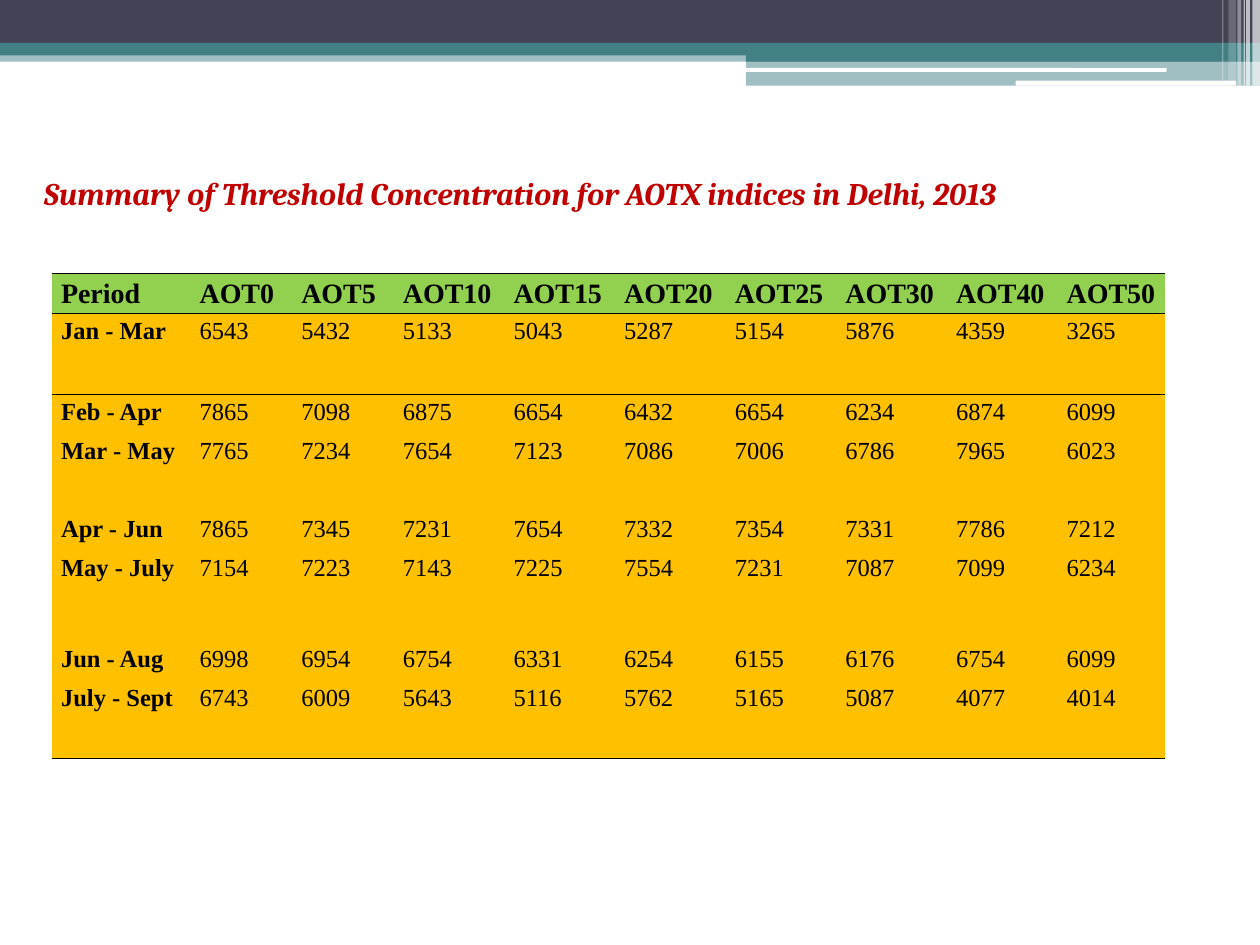
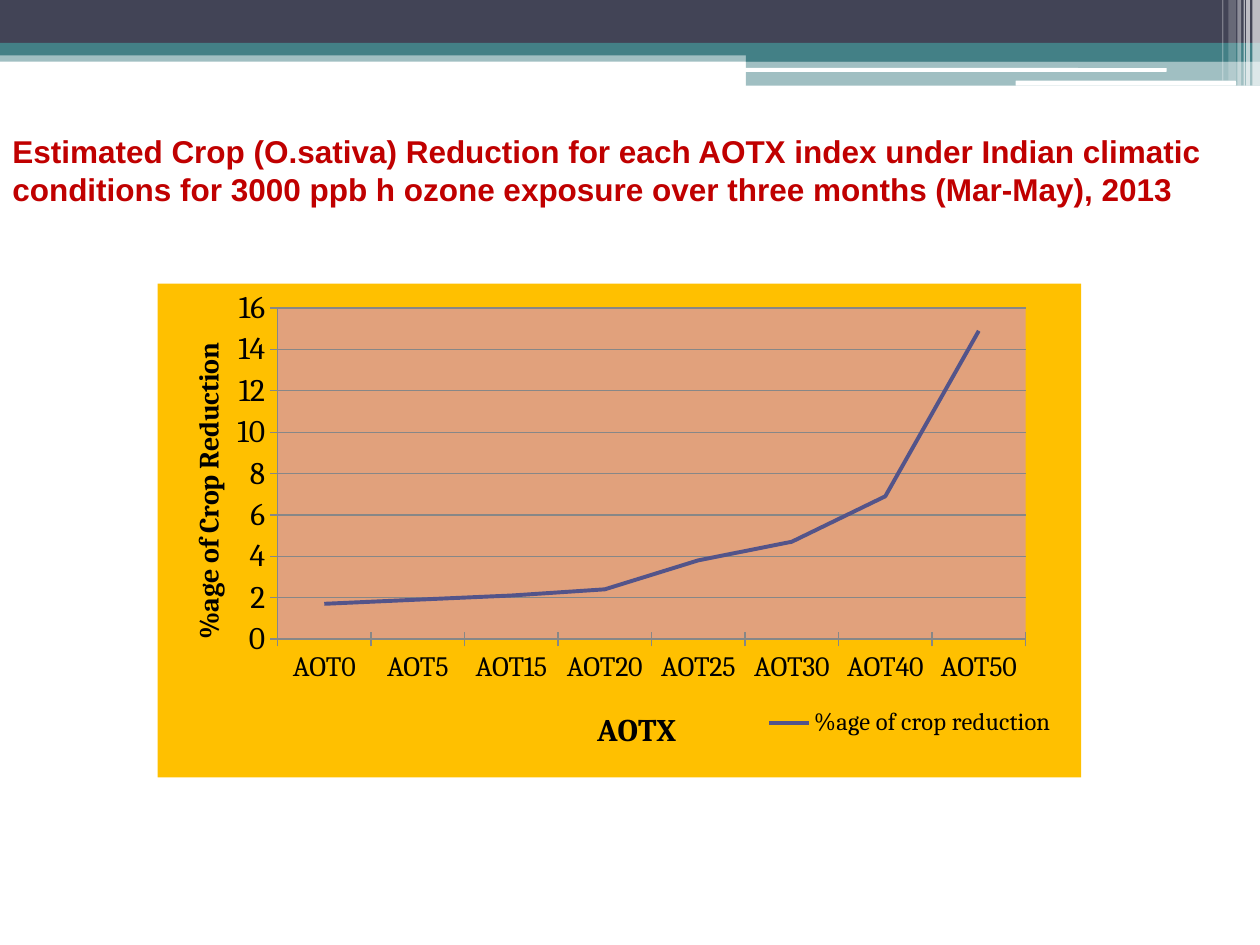
from lxml import etree
from pptx import Presentation
from pptx.chart.data import CategoryChartData
from pptx.dml.color import RGBColor
from pptx.enum.chart import XL_CHART_TYPE, XL_LEGEND_POSITION, XL_TICK_MARK
from pptx.enum.shapes import MSO_SHAPE
from pptx.enum.text import MSO_AUTO_SIZE
from pptx.oxml import parse_xml
from pptx.oxml.ns import nsdecls, qn
from pptx.util import Inches, Pt

RECTANGLE = MSO_SHAPE.RECTANGLE
ROUNDED = MSO_SHAPE.ROUNDED_RECTANGLE
FIT_SHAPE = MSO_AUTO_SIZE.SHAPE_TO_FIT_TEXT
LINE_CHART = XL_CHART_TYPE.LINE
LEGEND_RIGHT = XL_LEGEND_POSITION.RIGHT
TICK_CROSS = XL_TICK_MARK.CROSS

COLOURS = {
    "navy": "424456", "teal": "438086", "white": "FFFFFF", "black": "000000",
    "title": "C00000", "header": "92D050", "amber": "FFC000",
    "plot": "E1A17C", "curve": "53548A", "axis": "878787",
}
COLOUR = {name: RGBColor.from_string(code) for name, code in COLOURS.items()}

deck = Presentation()
deck.slide_width, deck.slide_height = Inches(10), Inches(7.5)
COLUMN = deck.slide_width / 100
ROW = deck.slide_height / 75


def on_grid(left, top, width, height):
    """Turn columns and rows of the 100 by 75 page grid into lengths."""
    return [round(n * unit) for n, unit in
            zip((left, top, width, height), (COLUMN, ROW, COLUMN, ROW))]


def add_title(page, text, place, font, italic=False):
    box = page.shapes.add_textbox(*on_grid(*place))
    box.text_frame.word_wrap = True
    box.text_frame.auto_size = FIT_SHAPE
    span = box.text_frame.paragraphs[0].add_run()
    span.text = text
    span.font.name, span.font.size = font, Pt(18)
    span.font.bold, span.font.italic = True, italic
    span.font.color.rgb = COLOUR["title"]


# Header bands: shape, colour, opacity in percent, place on the grid
BANDS = [
    (RECTANGLE, "teal", 50, (0, 4, 100, 0.9)),
    (RECTANGLE, "navy", 100, (0, 0, 100, 3.4)),
    (RECTANGLE, "teal", 100, (0, 3.4, 100, 1)),
    (RECTANGLE, "teal", 100, (59.2, 3.9, 40.8, 1)),
    (RECTANGLE, "teal", 50, (59.2, 4.8, 40.8, 2)),
    (ROUNDED, "white", 100, (59.1, 5.4, 33.5, 0.3)),
    (ROUNDED, "white", 100, (80.6, 6.4, 17.5, 0.4)),
]
# Thin stripes at the right edge: left, width, height, opacity
STRIPES = [
    (99.4, 0.6, 6.8, 65), (98.9, 0.3, 6.8, 65), (98.7, 0.1, 6.8, 60),
    (98.2, 0.3, 6.8, 40), (97.5, 0.6, 6.4, 20), (97, 0.1, 6.4, 30),
]
BANDS += [(RECTANGLE, "white", opacity, (left, 0, width, height))
          for left, width, height, opacity in STRIPES]

blank = deck.slide_layouts[6]
table_page, chart_page = [deck.slides.add_slide(blank) for _ in range(2)]
for page in (table_page, chart_page):
    for kind, colour, opacity, place in BANDS:
        band = page.shapes.add_shape(kind, *on_grid(*place))
        band.shadow.inherit = False
        band.line.fill.background()
        band.fill.solid()
        band.fill.fore_color.rgb = COLOUR[colour]
        if opacity < 100:
            paint = band._element.spPr.find(".//" + qn("a:srgbClr"))
            etree.SubElement(paint, qn("a:alpha"), val=str(opacity * 1000))

# Slide 1: threshold table
INDICES = ["AOT0", "AOT5", "AOT10", "AOT15", "AOT20", "AOT25", "AOT30", "AOT40", "AOT50"]
THRESHOLDS = [
    ["Period"] + INDICES,
    ["Jan - Mar", 6543, 5432, 5133, 5043, 5287, 5154, 5876, 4359, 3265],
    ["Feb - Apr", 7865, 7098, 6875, 6654, 6432, 6654, 6234, 6874, 6099],
    ["Mar - May", 7765, 7234, 7654, 7123, 7086, 7006, 6786, 7965, 6023],
    ["Apr - Jun", 7865, 7345, 7231, 7654, 7332, 7354, 7331, 7786, 7212],
    ["May - July", 7154, 7223, 7143, 7225, 7554, 7231, 7087, 7099, 6234],
    ["Jun - Aug", 6998, 6954, 6754, 6331, 6254, 6155, 6176, 6754, 6099],
    ["July - Sept", 6743, 6009, 5643, 5116, 5762, 5165, 5087, 4077, 4014],
]
COLUMN_WIDTHS = [11, 8.07, 8.07] + [8.78] * 6 + [8.5]
ROW_HEIGHTS = [3.2, 6.4, 3.1, 6.2, 3.1, 7.2, 3.1, 6.2]
NO_STYLE = "{2D5ABB26-0587-4C30-8999-92F81FD0307C}"

frame = table_page.shapes.add_table(
    len(ROW_HEIGHTS), len(COLUMN_WIDTHS),
    *on_grid(4.15, 21.7, sum(COLUMN_WIDTHS), sum(ROW_HEIGHTS)))
table = frame.table
table.first_row = table.horz_banding = False
frame._element.find(".//" + qn("a:tableStyleId")).text = NO_STYLE
for column, width in zip(table.columns, COLUMN_WIDTHS):
    column.width = round(width * COLUMN)
for row, height in zip(table.rows, ROW_HEIGHTS):
    row.height = round(height * ROW)

last = len(THRESHOLDS) - 1
for i, values in enumerate(THRESHOLDS):
    edges = {0: ["lnT", "lnB"], 1: ["lnT"], last: ["lnB"]}.get(i, [])
    for j, value in enumerate(values):
        cell = table.cell(i, j)
        cell.margin_left = cell.margin_right = Inches(0.07)
        cell.margin_top = cell.margin_bottom = 0
        cell.fill.solid()
        cell.fill.fore_color.rgb = COLOUR["amber" if i else "header"]
        para = cell.text_frame.paragraphs[0]
        para.line_spacing = 1.15
        span = para.add_run()
        span.text = str(value)
        span.font.name, span.font.size = "Times New Roman", Pt(14 if i else 16)
        span.font.bold = i == 0 or j == 0
        span.font.color.rgb = COLOUR["black"]
        for position, edge in enumerate(edges):
            cell._tc.get_or_add_tcPr().insert(position, parse_xml(
                f'<a:{edge} {nsdecls("a")} w="12700"><a:solidFill>'
                f'<a:srgbClr val="{COLOURS["black"]}"/></a:solidFill></a:{edge}>'))

add_title(table_page, "Summary of Threshold Concentration for AOTX indices in Delhi, 2013",
          (2.5, 13.3, 97.5, 4), "Cambria", italic=True)

# Slide 2: crop reduction chart
reduction = CategoryChartData()
reduction.categories = [name for name in INDICES if name != "AOT10"]
reduction.add_series("%age of crop reduction", [1.7, 1.9, 2.1, 2.4, 3.8, 4.7, 6.9, 14.9])
chart = chart_page.shapes.add_chart(
    LINE_CHART, *on_grid(12.5, 22.5, 73.3, 39.2), reduction).chart
chart.has_title = False
chart.font.name, chart.font.size = "Cambria", Pt(10)
chart.font.color.rgb = COLOUR["black"]

curve = chart.plots[0].series[0]
curve.smooth = False
curve.format.line.color.rgb = COLOUR["curve"]
curve.format.line.width = Pt(2.25)

for axis, text, title_size, label_size in (
        (chart.category_axis, "AOTX", 18, 16),
        (chart.value_axis, "%age of Crop Reduction", 16, 18)):
    axis.major_tick_mark = TICK_CROSS
    axis.tick_labels.font.size = Pt(label_size)
    axis.format.line.color.rgb = COLOUR["axis"]
    span = axis.axis_title.text_frame.paragraphs[0].add_run()
    span.text = text
    span.font.name, span.font.size = "Cambria", Pt(title_size)
    span.font.bold = True
    span.font.color.rgb = COLOUR["black"]

scale = chart.value_axis
scale.minimum_scale, scale.maximum_scale, scale.major_unit = 0, 16, 2
scale.has_major_gridlines = True
scale.major_gridlines.format.line.color.rgb = COLOUR["axis"]

chart.has_legend = True
chart.legend.position = LEGEND_RIGHT
chart.legend.include_in_layout = False
chart.legend.font.size = Pt(14)

# Parts of the chart as shares of its frame
space = chart._chartSpace
plot_area = space.find(".//" + qn("c:plotArea"))
for part, shares in (
        (plot_area, {"x": 0.13, "y": 0.05, "w": 0.81, "h": 0.67}),
        (chart.legend._element, {"x": 0.65, "y": 0.85, "w": 0.33, "h": 0.08}),
        (chart.category_axis.axis_title._element, {"x": 0.47, "y": 0.85}),
        (chart.value_axis.axis_title._element, {"x": 0.03, "y": 0.11})):
    layout = part.find(qn("c:layout"))
    if layout is None:
        layout = etree.Element(qn("c:layout"))
        part.insert(0 if part is plot_area else 1, layout)
    manual = etree.SubElement(layout, qn("c:manualLayout"))
    if part is plot_area:
        etree.SubElement(manual, qn("c:layoutTarget"), val="inner")
    for side in "xy":
        etree.SubElement(manual, qn(f"c:{side}Mode"), val="edge")
    for side, share in shares.items():
        etree.SubElement(manual, qn(f"c:{side}"), val=str(share))

frame_fill, plot_fill = [parse_xml(
    f'<c:spPr {nsdecls("c", "a")}><a:solidFill><a:srgbClr val="{COLOURS[name]}"/>'
    '</a:solidFill><a:ln><a:noFill/></a:ln></c:spPr>') for name in ("amber", "plot")]
space.find(qn("c:chart")).addnext(frame_fill)
plot_area.append(plot_fill)

add_title(chart_page, "Estimated Crop (O.sativa) Reduction for each AOTX index under Indian "
          "climatic conditions for 3000 ppb h ozone exposure over three months (Mar-May), 2013",
          (0, 10, 100, 7.1), "Arial")

deck.save("out.pptx")
